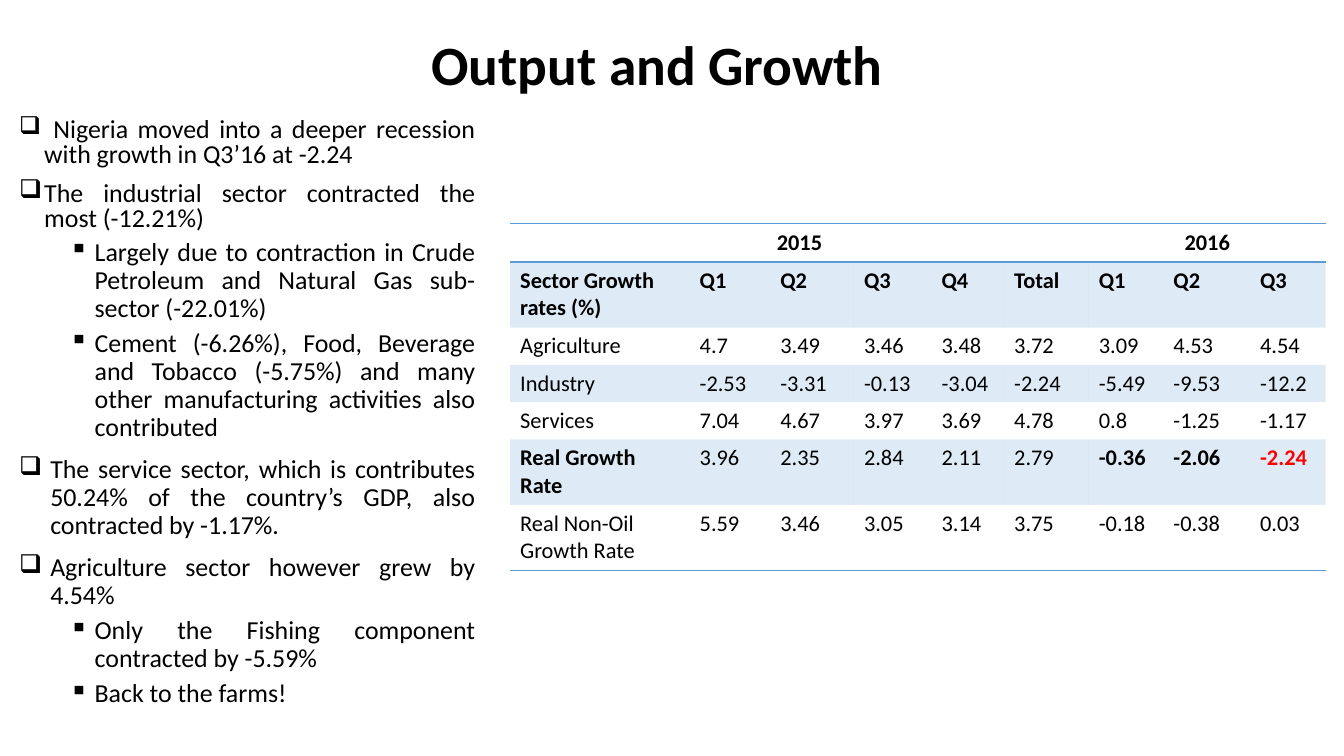
from lxml.etree import SubElement
from pptx import Presentation
from pptx.dml.color import RGBColor
from pptx.enum.text import MSO_ANCHOR, PP_ALIGN
from pptx.oxml import parse_xml
from pptx.oxml.ns import nsdecls, qn
from pptx.util import Emu, Inches, Pt

BLACK = RGBColor(0x00, 0x00, 0x00)
RED = RGBColor(0xFF, 0x00, 0x00)
RULE_BLUE = RGBColor(0x5B, 0x9B, 0xD5)
OUTLINE_BLUE = RGBColor(0x2E, 0x75, 0xB6)
BAND_OPACITY = 20
NO_GRID_STYLE = "{2D5ABB26-0587-4C30-8999-92F81FD0307C}"

# Bullet kinds: mark, hanging indent, left margin, line spacing, space before, level
TIGHT = ("❑", 0.25, 0.25, 0.8, 10, 0)
WIDE = ("❑", 0.31, 0.31, 0.9, 10, 0)
SUB = ("▪", 0.25, 0.75, 0.9, 5, 1)

FINDINGS = [
    (TIGHT, "Nigeria moved into a deeper recession with growth in Q3’16 at -2.24"),
    (TIGHT, "The industrial sector contracted the most (-12.21%)"),
    (SUB, "Largely due to contraction in Crude Petroleum and Natural Gas "
          "sub-sector (-22.01%)"),
    (SUB, "Cement (-6.26%), Food, Beverage and Tobacco (-5.75%) and many other "
          "manufacturing activities also contributed"),
    (WIDE, "The service sector, which is contributes 50.24% of the country’s GDP, "
           "also contracted by -1.17%."),
    (WIDE, "Agriculture sector however grew by 4.54%"),
    (SUB, "Only the Fishing component contracted by -5.59%"),
    (SUB, "Back to the farms!"),
]

YEARS = [("2015", 0, 5), ("2016", 6, 8)]
GROWTH_RATES = [
    ["Sector Growth rates (%)", "Q1", "Q2", "Q3", "Q4", "Total", "Q1", "Q2", "Q3"],
    ["Agriculture", "4.7", "3.49", "3.46", "3.48", "3.72", "3.09", "4.53", "4.54"],
    ["Industry", "-2.53", "-3.31", "-0.13", "-3.04", "-2.24", "-5.49", "-9.53", "-12.2"],
    ["Services", "7.04", "4.67", "3.97", "3.69", "4.78", "0.8", "-1.25", "-1.17"],
    ["Real Growth Rate", "3.96", "2.35", "2.84", "2.11", "2.79", "-0.36", "-2.06", "-2.24"],
    ["Real Non-Oil Growth Rate", "5.59", "3.46", "3.05", "3.14", "3.75", "-0.18", "-0.38", "0.03"],
]
COLUMN_WIDTHS = [1.78, 0.8, 0.83, 0.77, 0.72, 0.84, 0.74, 0.86, 0.75]
YEAR_ROW, ONE_LINE, TWO_LINES = 0.38, 0.37, 0.65
ROW_HEIGHTS = [YEAR_ROW, TWO_LINES] + [ONE_LINE] * 3 + [TWO_LINES] * 2
HEADING_ROW, REAL_GROWTH_ROW = 1, 5


def write(paragraph, text, size=16, bold=False, color=BLACK, align=None):
    if align is not None:
        paragraph.alignment = align
    run = paragraph.add_run()
    run.text = text
    run.font.name = "Calibri"
    run.font.size = Pt(size)
    run.font.bold = bold
    run.font.color.rgb = color
    return run


def add_text_frame(slide, box, anchor=MSO_ANCHOR.TOP):
    frame = slide.shapes.add_textbox(*map(Inches, box)).text_frame
    frame.word_wrap = True
    frame.vertical_anchor = anchor
    return frame


def line_xml(tag, color, points):
    return parse_xml(f'<a:{tag} {nsdecls("a")} w="{Pt(points)}"><a:solidFill>'
                     f'<a:srgbClr val="{color}"/></a:solidFill></a:{tag}>')


def add_title(slide, box):
    heading = add_text_frame(slide, box, MSO_ANCHOR.MIDDLE).paragraphs[0]
    heading.line_spacing = 0.9
    run = write(heading, "Output and Growth", size=39.6, bold=True, align=PP_ALIGN.CENTER)
    run.font._element.insert(0, line_xml("ln", OUTLINE_BLUE, 0.75))


def add_findings(slide, box):
    frame = add_text_frame(slide, box)
    for number, (kind, finding) in enumerate(FINDINGS):
        mark, hanging, margin, spacing, before, level = kind
        paragraph = frame.add_paragraph() if number else frame.paragraphs[0]
        paragraph.level = level
        paragraph.line_spacing = spacing
        paragraph.space_before = Pt(before)
        properties = paragraph._p.get_or_add_pPr()
        properties.set("marL", str(Inches(margin)))
        properties.set("indent", str(-Inches(hanging)))
        SubElement(properties, qn("a:buChar"), char=mark)
        if number == 0:
            write(paragraph, " ", size=17.6)
        write(paragraph, finding, size=18.5, align=PP_ALIGN.JUSTIFY)


def shade(cell, banded):
    if not banded:
        cell.fill.background()
        return
    cell.fill.solid()
    cell.fill.fore_color.rgb = RULE_BLUE
    tint = cell._tc.tcPr.find(f'{qn("a:solidFill")}/{qn("a:srgbClr")}')
    SubElement(tint, qn("a:alpha"), val=str(BAND_OPACITY * 1000))


def rule(cell, *edges):
    for position, edge in enumerate(edges):
        cell._tc.get_or_add_tcPr().insert(position, line_xml(edge, RULE_BLUE, 1))


def add_growth_table(slide, box):
    frame = slide.shapes.add_table(len(ROW_HEIGHTS), len(COLUMN_WIDTHS), *map(Inches, box))
    table = frame.table
    table._tbl.tblPr.find(qn("a:tableStyleId")).text = NO_GRID_STYLE
    for column, width in zip(table.columns, COLUMN_WIDTHS):
        column.width = Inches(width)
    for row, height in zip(table.rows, ROW_HEIGHTS):
        row.height = Inches(height)

    # Year headings
    for column in range(len(COLUMN_WIDTHS)):
        shade(table.cell(0, column), False)
        rule(table.cell(0, column), "lnT", "lnB")
    for year, first, last in YEARS:
        year_cell = table.cell(0, first)
        year_cell.merge(table.cell(0, last))
        write(year_cell.text_frame.paragraphs[0], year, bold=True, align=PP_ALIGN.CENTER)

    # Quarter headings and sector rates
    last_row, last_column = len(ROW_HEIGHTS) - 1, len(COLUMN_WIDTHS) - 1
    for row, rates in enumerate(GROWTH_RATES, start=1):
        for column, rate in enumerate(rates):
            cell = table.cell(row, column)
            real_growth = row == REAL_GROWTH_ROW
            bold = row == HEADING_ROW or (real_growth and (column == 0 or column >= 6))
            latest = real_growth and column == last_column
            write(cell.text_frame.paragraphs[0], rate, bold=bold,
                  color=RED if latest else BLACK)
            shade(cell, row % 2 == 1)
            if row == last_row:
                rule(cell, "lnB")


def main():
    presentation = Presentation()
    presentation.slide_width = Emu(Inches(13.33))
    presentation.slide_height = Inches(7.5)
    slide = presentation.slides.add_slide(presentation.slide_layouts[6])
    add_title(slide, (0.77, 0.34, 11.5, 0.65))
    add_growth_table(slide, (5.06, 2.22, sum(COLUMN_WIDTHS), sum(ROW_HEIGHTS)))
    add_findings(slide, (0.09, 1.13, 4.72, 6.24))
    presentation.save("out.pptx")


if __name__ == "__main__":
    main()
